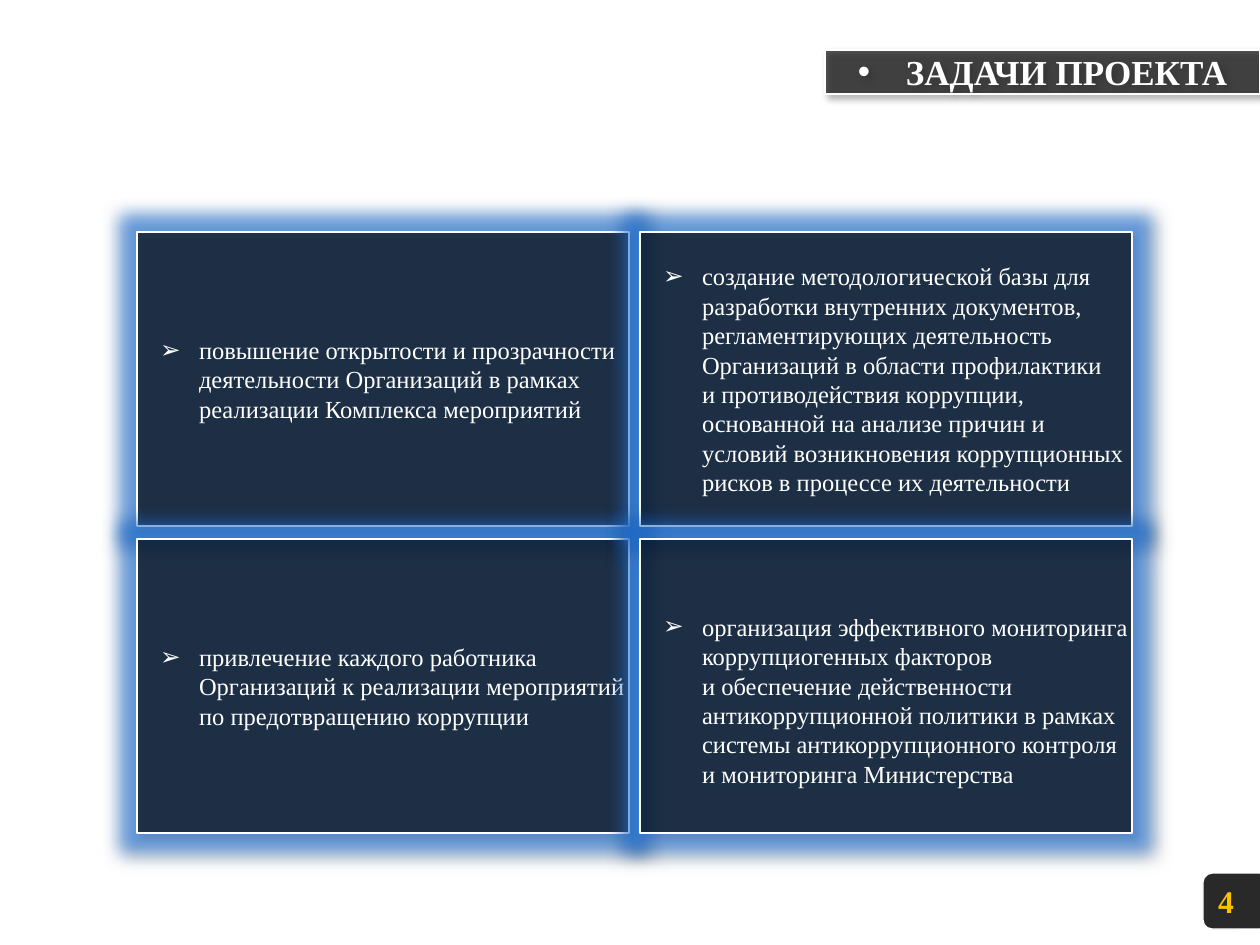
from dataclasses import dataclass

import pptx
import pptx.dml.color
import pptx.enum.shapes
import pptx.enum.text
import pptx.oxml
import pptx.oxml.ns
import pptx.util
from lxml import etree

PX = 914400 / 126  # EMU in one px
FONT = "Times New Roman"
BULLET_FONT = "Arial"
COLORS = {
    "panel": "000000",
    "text": "FFFFFF",
    "outline": "FFFFFF",
    "number": "FFC000",
    "shadow": "000000",
    "glow": "247BE6",
}
MSO_ANCHOR = pptx.enum.text.MSO_ANCHOR
PP_ALIGN = pptx.enum.text.PP_ALIGN


@dataclass
class Task:
    placeholder: int
    column: int
    row: int
    text: str
    top_inset: int = 0


def px(value: float) -> int:
    return round(value * PX)


def rgb(name: str) -> pptx.dml.color.RGBColor:
    return pptx.dml.color.RGBColor.from_string(COLORS[name])


def add_xml(parent, tag: str, **attributes):
    child = etree.SubElement(parent, pptx.oxml.ns.qn(tag))
    for name, value in attributes.items():
        child.set(name, str(value))
    return child


def add_color(parent, name: str, opacity: int) -> None:
    color = add_xml(parent, "a:srgbClr", val=COLORS[name])
    add_xml(color, "a:alpha", val=opacity * 1000)


def place(shape, left: int, top: int, width: int, height: int) -> None:
    shape.left, shape.top = px(left), px(top)
    shape.width, shape.height = px(width), px(height)


def paint(shape, opacity: int, line_width: float) -> None:
    """Translucent dark fill with a white outline."""
    shape.fill.solid()
    shape.fill.fore_color.rgb = rgb("panel")
    fill_color = shape._element.spPr.find(".//" + pptx.oxml.ns.qn("a:srgbClr"))
    add_xml(fill_color, "a:alpha", val=opacity * 1000)
    shape.line.color.rgb = rgb("outline")
    shape.line.width = pptx.util.Pt(line_width)


def add_effects(shape, glow_radius: float = 0) -> None:
    effects = add_xml(shape._element.spPr, "a:effectLst")
    if glow_radius:
        glow = add_xml(effects, "a:glow", rad=pptx.util.Pt(glow_radius))
        add_color(glow, "glow", 60)
    shadow = add_xml(effects, "a:outerShdw", blurRad=pptx.util.Pt(4),
                     dist=pptx.util.Pt(3), dir=45 * 60000, algn="tl", rotWithShape=0)
    add_color(shadow, "shadow", 40)


def write(shape, text: str, size: int, color: str, bold: bool, align, anchor,
          bullet: str = "", margin: int = 0, hanging: int = 0, top_inset: int = 0) -> None:
    frame = shape.text_frame
    frame.word_wrap = True
    frame.auto_size = pptx.enum.text.MSO_AUTO_SIZE.NONE
    frame.vertical_anchor = anchor
    if bullet:
        frame.margin_left = frame.margin_right = frame.margin_bottom = 0
        frame.margin_top = px(top_inset)
    frame.text = text
    paragraph = frame.paragraphs[0]
    if bullet:
        properties = paragraph._p.get_or_add_pPr()
        properties.set("marL", str(px(margin)))
        properties.set("indent", str(-px(hanging)))
        add_xml(properties, "a:buFont", typeface=BULLET_FONT)
        add_xml(properties, "a:buChar", char=bullet)
    paragraph.alignment = align
    paragraph.space_before = pptx.util.Pt(0)
    paragraph.font.name = FONT
    paragraph.font.size = pptx.util.Pt(size)
    paragraph.font.bold = bold
    paragraph.font.color.rgb = rgb(color)


def draw_task(slide, task: Task) -> None:
    panel = slide.placeholders[task.placeholder]
    place(panel, 137 + 503 * task.column, 232 + 307 * task.row, 492, 294)
    paint(panel, 66, 1)
    add_effects(panel, glow_radius=20)
    write(panel, task.text, 14, "text", False, PP_ALIGN.LEFT, MSO_ANCHOR.MIDDLE,
          "➢", 62, 39, task.top_inset)


TASKS = [
    Task(1, 0, 0, "повышение открытости и прозрачности деятельности Организаций "
                  "в рамках реализации Комплекса мероприятий"),
    Task(2, 0, 1, "привлечение каждого работника Организаций к реализации "
                  "мероприятий по предотвращению коррупции"),
    Task(3, 1, 0, "создание методологической базы для разработки внутренних документов, "
                  "регламентирующих деятельность Организаций в области профилактики \v"
                  "и противодействия коррупции, основанной на анализе причин и условий "
                  "возникновения коррупционных рисков в процессе их деятельности"),
    Task(4, 1, 1, "организация эффективного мониторинга коррупциогенных факторов \v"
                  "и обеспечение действенности антикоррупционной политики в рамках системы "
                  "антикоррупционного контроля и мониторинга Министерства", top_inset=28),
]


def main() -> None:
    deck = pptx.Presentation()
    deck.slide_width, deck.slide_height = px(1260), px(945)
    slide = deck.slides.add_slide(deck.slide_layouts.get_by_name("Comparison"))

    # Title strip
    title = slide.shapes.title
    place(title, 825, 50, 435, 44)
    paint(title, 66, 1)
    add_effects(title)
    write(title, "ЗАДАЧИ ПРОЕКТА", 20, "text", True, PP_ALIGN.CENTER, MSO_ANCHOR.TOP,
          "•", 48, 48)

    # Four task panels
    for task in TASKS:
        draw_task(slide, task)

    # Page number
    number = slide.shapes.add_shape(
        pptx.enum.shapes.MSO_SHAPE.ROUNDED_RECTANGLE, 0, 0, 0, 0)
    place(number, 1203, 873, 66, 56)
    paint(number, 84, 0.75)
    number.shadow.inherit = False
    write(number, "4", 18, "number", True, PP_ALIGN.LEFT, MSO_ANCHOR.TOP)

    deck.save("out.pptx")


if __name__ == "__main__":
    main()
